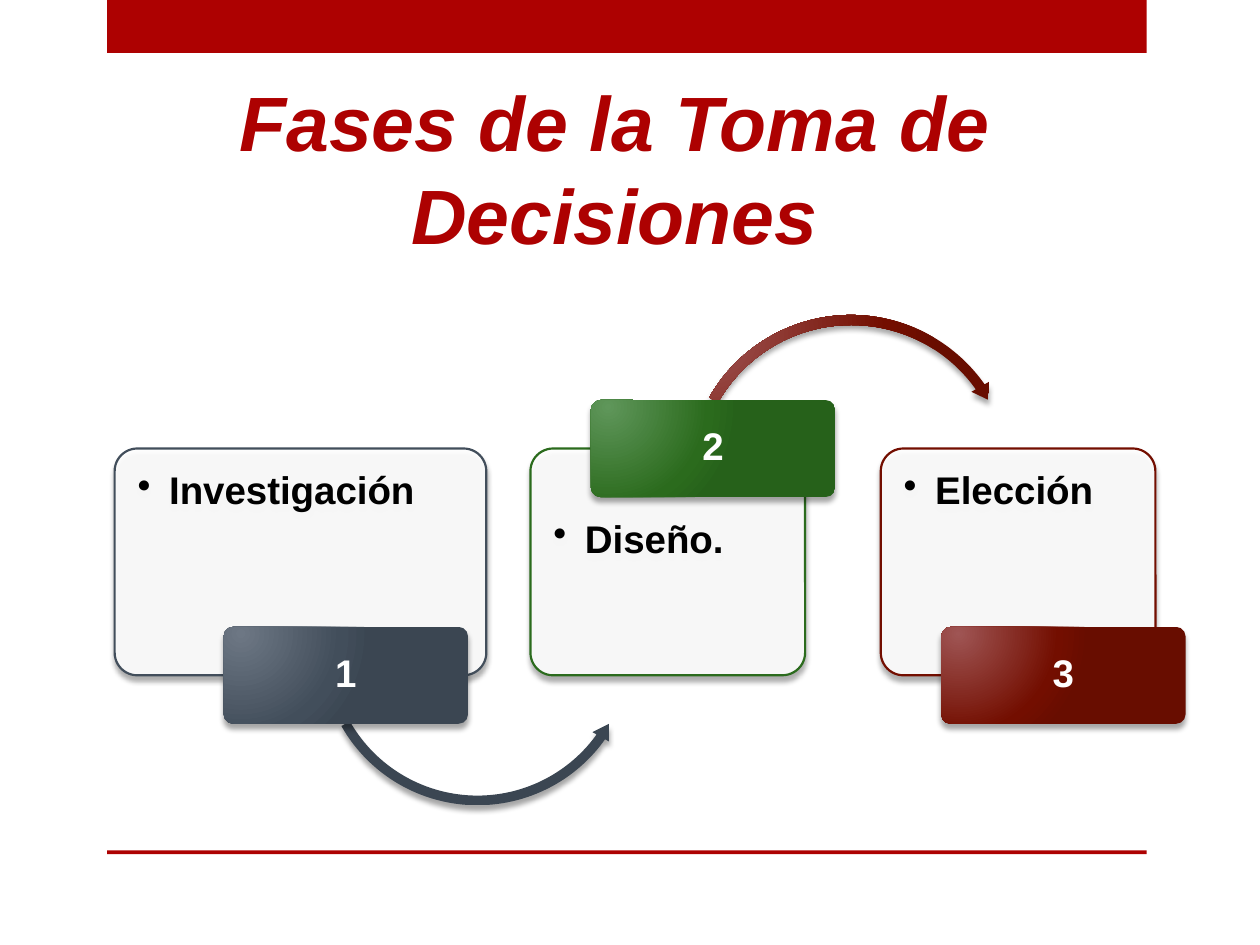
from dataclasses import dataclass

from lxml.etree import SubElement
from pptx import Presentation
from pptx.dml.color import RGBColor
from pptx.enum.shapes import MSO_SHAPE as Preset
from pptx.enum.text import MSO_ANCHOR as Anchor, PP_ALIGN as Align
from pptx.oxml.ns import qn
from pptx.util import Inches, Pt

COLUMNS, ROWS = 100, 75
RED, BLACK, WHITE = "AD0101", "000000", "FFFFFF"
CARD_TOP, CARD_HEIGHT = 35.6, 18
BADGE_WIDTH, BADGE_HEIGHT, BADGE_SHIFT = 19.4, 7.7, 3.6
TEXT_INSET = 1.3

deck = Presentation()
deck.slide_width, deck.slide_height = Inches(10), Inches(7.5)
page = deck.slides.add_slide(deck.slide_layouts[6])


@dataclass
class Palette:
    light: str
    main: str
    dark: str


@dataclass
class Arrow:
    preset: Preset
    center: tuple[float, float]
    diameter: float
    adjustments: tuple[float, ...]
    palette: Palette


@dataclass
class Phase:
    number: str
    name: str
    center: float
    width: float
    palette: Palette
    badge_on_top: bool = False
    arrow: Arrow | None = None


def color(value: str) -> RGBColor:
    return RGBColor.from_string(value)


def across(columns: float) -> int:
    return round(deck.slide_width * columns / COLUMNS)


def down(rows: float) -> int:
    return round(deck.slide_height * rows / ROWS)


def area(left: float, top: float, width: float, height: float) -> tuple[int, ...]:
    return across(left), down(top), across(width), down(height)


def child(parent, tag: str, **attributes):
    return SubElement(parent, qn(tag), {key: str(value) for key, value in attributes.items()})


def add_block(preset: Preset, place: tuple[int, ...], fill: str):
    block = page.shapes.add_shape(preset, *place)
    block.shadow.inherit = False
    block.fill.solid()
    block.fill.fore_color.rgb = color(fill)
    block.line.fill.background()
    return block


def cast_shadow(block) -> None:
    effects = block._element.spPr.find(qn("a:effectLst"))
    shadow = child(effects, "a:outerShdw", blurRad=Pt(3), dist=Pt(3),
                   dir=5400000, rotWithShape=0)
    child(child(shadow, "a:srgbClr", val=BLACK), "a:alpha", val=35000)


def shade(block, palette: Palette) -> None:
    properties = block._element.spPr
    solid = properties.find(qn("a:solidFill"))
    gradient = child(properties, "a:gradFill", rotWithShape=1)
    properties.replace(solid, gradient)
    stops = child(gradient, "a:gsLst")
    for position, tone in ((0, palette.light), (76, palette.main), (100, palette.dark)):
        child(child(stops, "a:gs", pos=position * 1000), "a:srgbClr", val=tone)
    path = child(gradient, "a:path", path="circle")
    child(path, "a:fillToRect", l=15000, t=15000, r=100000, b=100000)
    cast_shadow(block)


def write(box, text: str, size: int, tone: str, align: Align, anchor: Anchor):
    frame = box.text_frame
    frame.word_wrap = True
    frame.vertical_anchor = anchor
    para = frame.paragraphs[0]
    para.text = text
    para.alignment = align
    font = para.font
    font.name, font.size, font.bold = "Arial", Pt(size), True
    font.color.rgb = color(tone)
    return para


def add_card(phase: Phase) -> None:
    place = area(phase.center - phase.width / 2, CARD_TOP, phase.width, CARD_HEIGHT)
    card = add_block(Preset.ROUNDED_RECTANGLE, place, WHITE)
    card.adjustments[0] = 0.1
    fill = card._element.spPr.find(qn("a:solidFill"))
    child(fill[0], "a:alpha", val=90000)
    card.line.color.rgb = color(phase.palette.main)
    card.line.width = Pt(1.25)
    cast_shadow(card)
    para = write(card, phase.name, 22, BLACK, Align.LEFT, Anchor.TOP)
    para.line_spacing = 0.9
    frame = card.text_frame
    frame.margin_left = frame.margin_right = across(TEXT_INSET)
    covered = BADGE_HEIGHT / 2 if phase.badge_on_top else 0
    frame.margin_top = down(TEXT_INSET + covered)
    properties = para._p.get_or_add_pPr()
    properties.set("marL", str(Inches(0.25)))
    properties.set("indent", str(-Inches(0.25)))
    child(properties, "a:buChar", char="•")
    properties.append(properties.find(qn("a:defRPr")))


def add_arrow(arrow: Arrow) -> None:
    x, y = arrow.center
    radius = arrow.diameter / 2
    place = area(x - radius, y - radius, arrow.diameter, arrow.diameter)
    block = add_block(arrow.preset, place, arrow.palette.main)
    for index, value in enumerate(arrow.adjustments):
        block.adjustments[index] = value
    shade(block, arrow.palette)


def add_badge(phase: Phase) -> None:
    edge = CARD_TOP if phase.badge_on_top else CARD_TOP + CARD_HEIGHT
    place = area(phase.center + BADGE_SHIFT - BADGE_WIDTH / 2, edge - BADGE_HEIGHT / 2,
                 BADGE_WIDTH, BADGE_HEIGHT)
    badge = add_block(Preset.ROUNDED_RECTANGLE, place, phase.palette.main)
    badge.adjustments[0] = 0.1
    shade(badge, phase.palette)
    para = write(badge, phase.number, 22, WHITE, Align.CENTER, Anchor.MIDDLE)
    para.line_spacing = 0.9


def main() -> None:
    slate = Palette("6D7784", "424E5B", "3B4652")
    green = Palette("5F965A", "2B6B1D", "26611A")
    maroon = Palette("9F5554", "730E00", "680D00")
    lower = Arrow(Preset.LEFT_CIRCULAR_ARROW, (37.9, 51.5), 25.6,
                  (0.03, 3.56, 21.31, 90.25, 0.03), slate)
    upper = Arrow(Preset.CIRCULAR_ARROW, (67.55, 37.95), 26.7,
                  (0.03, 3.4, 194.85, 125.76, 0.03), maroon)
    phases = (
        Phase("1", "Investigación", 23.85, 29.5, slate, arrow=lower),
        Phase("2", "Diseño.", 53, 21.8, green, badge_on_top=True, arrow=upper),
        Phase("3", "Elección", 80.8, 21.8, maroon),
    )

    for top, height in ((0, 4.2), (67.5, 0.3)):
        add_block(Preset.RECTANGLE, area(8.5, top, 82.5, height), RED)
    title = page.shapes.add_textbox(*area(5.8, 3.6, 86, 17.5))
    para = write(title, "Fases de la Toma de Decisiones", 44, RED, Align.CENTER, Anchor.BOTTOM)
    para.font.italic = True

    for phase in phases:
        add_card(phase)
        if phase.arrow:
            add_arrow(phase.arrow)
        add_badge(phase)
    deck.save("out.pptx")


if __name__ == "__main__":
    main()
